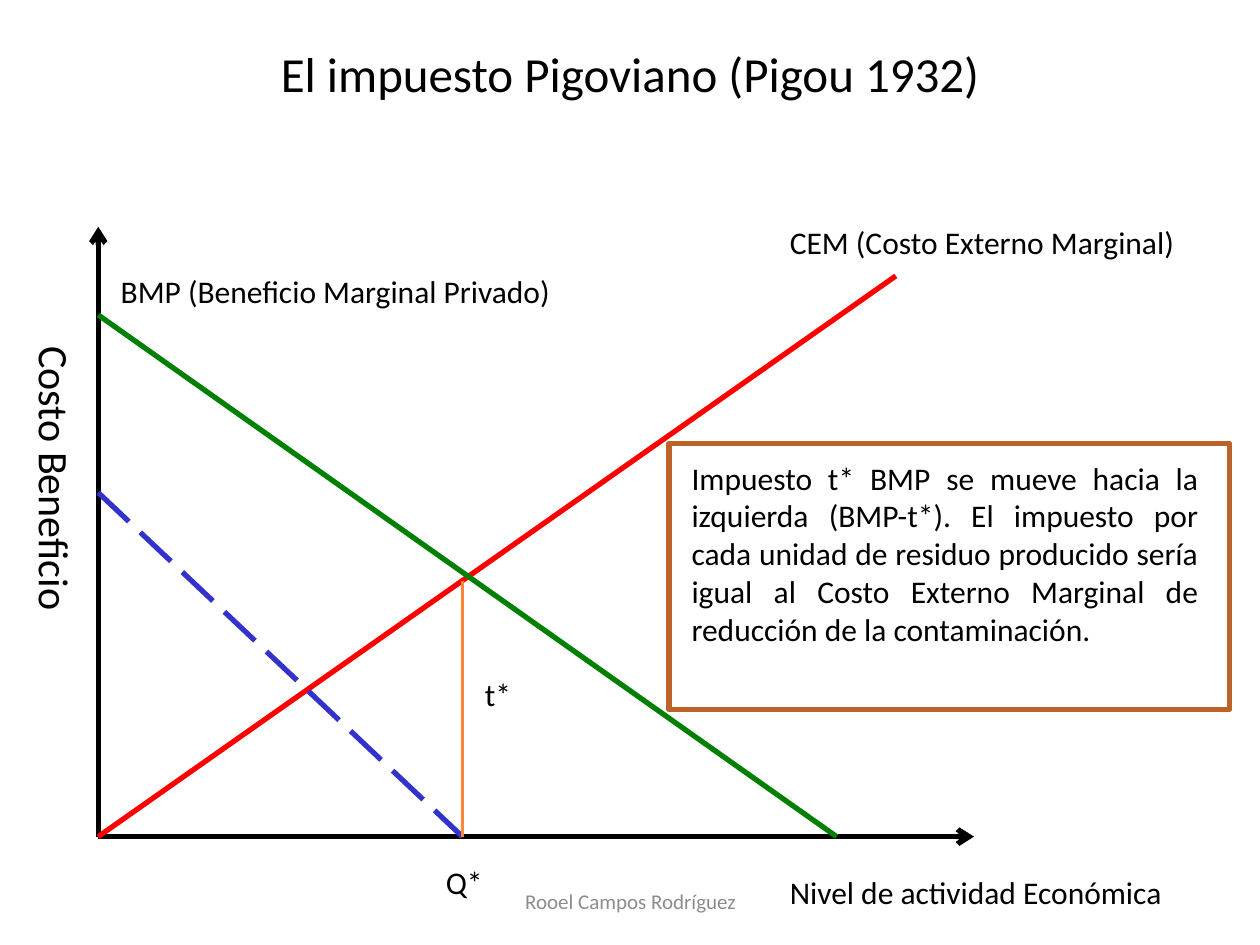
from lxml import etree
from pptx import Presentation
from pptx import util as u
from pptx.dml.color import RGBColor
from pptx.enum import dml, shapes, text
from pptx.oxml.ns import qn

FONT = "Calibri"
COLORS = {
    "ink": "000000",
    "external_cost": "FF0000",
    "private_benefit": "008000",
    "taxed_benefit": "3333CC",
    "tax": "FE8637",
    "note_border": "BC6329",
    "footer": "8C8C8C",
}
ALIGN = text.PP_ALIGN
MIDDLE = text.MSO_ANCHOR.MIDDLE


def rgb(name):
    return RGBColor.from_string(COLORS[name])


def add_text(slide, box, words, size=18, color="ink", align=ALIGN.LEFT,
             anchor=text.MSO_ANCHOR.TOP, wrap=True):
    shape = slide.shapes.add_textbox(*(u.Inches(length) for length in box))
    frame = shape.text_frame
    frame.text = words
    frame.word_wrap = wrap
    frame.vertical_anchor = anchor
    paragraph = frame.paragraphs[0]
    paragraph.alignment = align
    font = paragraph.runs[0].font
    font.name, font.size = FONT, u.Pt(size)
    font.color.rgb = rgb(color)
    return shape


def add_line(slide, start, end, color, width=3, dash=None, arrow=False):
    line = slide.shapes.add_connector(
        shapes.MSO_CONNECTOR.STRAIGHT,
        *(u.Inches(length) for length in (*start, *end)))
    line.line.color.rgb = rgb(color)
    line.line.width = u.Pt(width)
    if dash:
        line.line.dash_style = dash
    if arrow:
        etree.SubElement(line.line._get_or_add_ln(), qn("a:tailEnd"), type="arrow")
    etree.SubElement(line._element.spPr, qn("a:effectLst"))


def add_diagram(slide, left, top, width, height):
    """Draw the axes, the curves and their labels; the box spans the axes."""
    def point(across, up):
        return left + across, top + height - up

    quantity = 2.89
    origin = point(0, 0)
    add_line(slide, origin, point(0, height), "ink", arrow=True)
    add_line(slide, origin, point(width, 0), "ink", arrow=True)
    add_line(slide, origin, point(6.33, 4.45), "external_cost")
    add_line(slide, point(0, 4.14), point(5.86, 0), "private_benefit")
    add_line(slide, point(0, 2.73), point(quantity, 0), "taxed_benefit",
             dash=dml.MSO_LINE.LONG_DASH)
    add_line(slide, point(quantity, 2.03), point(quantity, 0), "tax", width=2)

    labels = [
        ("BMP (Beneficio Marginal Privado)", 0.08, 4.53, 3.65),
        ("CEM (Costo Externo Marginal)", 5.39, 4.92, 3.29),
        ("t*", 2.97, 1.33, 0.41),
        ("Nivel de actividad Económica", 5.39, -0.24, 3.19),
        ("Q*", 2.66, -0.16, 0.5),
    ]
    for words, across, up, label_width in labels:
        add_text(slide, (*point(across, up), label_width, 0.4), words, wrap=False)

    axis_title = add_text(slide, (left - 1.55, top + 1.81, 2.42, 0.5),
                          "Costo Beneficio", size=24)
    axis_title.rotation = 90


def add_note(slide, left, top, width, height):
    border = slide.shapes.add_shape(
        shapes.MSO_SHAPE.RECTANGLE,
        *(u.Inches(length) for length in (left, top, width, height)))
    border.shadow.inherit = False
    border.fill.background()
    border.line.color.rgb = rgb("note_border")
    border.line.width = u.Pt(3.15)
    add_text(slide, (left + 0.08, top + 0.07, width - 0.23, 1.62),
             "Impuesto t* BMP se mueve hacia la izquierda (BMP-t*). El impuesto "
             "por cada unidad de residuo producido sería igual al Costo Externo "
             "Marginal de reducción de la contaminación.", align=ALIGN.JUSTIFY)


def main():
    presentation = Presentation()
    presentation.slide_width = u.Inches(10)
    presentation.slide_height = u.Inches(7.5)
    slide = presentation.slides.add_slide(presentation.slide_layouts[6])

    add_text(slide, (0.5, 0.3, 9, 0.56), "El impuesto Pigoviano (Pigou 1932)",
             size=28, align=ALIGN.CENTER, anchor=MIDDLE)
    add_diagram(slide, 0.78, 1.8, 6.95, 4.84)
    add_note(slide, 5.31, 3.52, 4.45, 2.11)
    add_text(slide, (3.42, 6.95, 3.17, 0.4), "Rooel Campos Rodríguez",
             size=12, color="footer", align=ALIGN.CENTER, anchor=MIDDLE)
    presentation.save("out.pptx")


if __name__ == "__main__":
    main()
